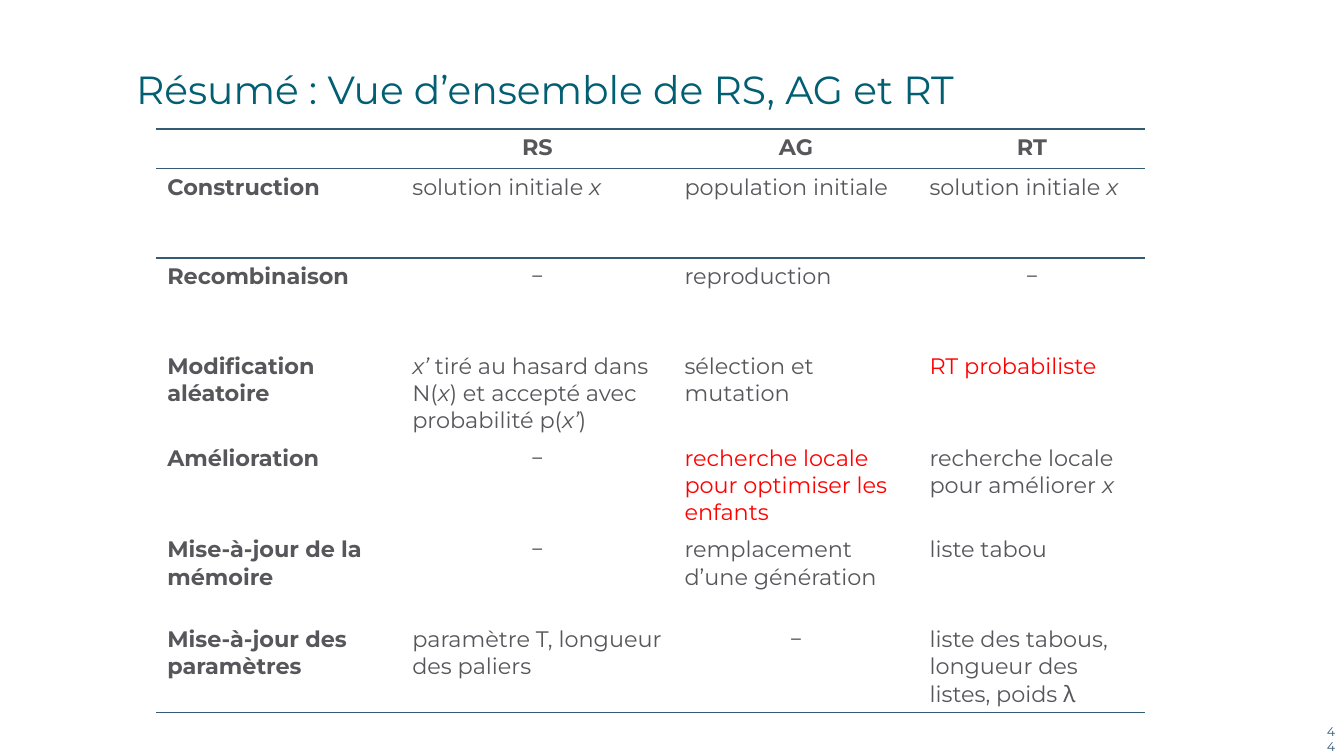
import pptx
import pptx.dml.color
import pptx.enum.text
import pptx.oxml
import pptx.oxml.ns
import pptx.util
from dataclasses import dataclass


@dataclass(frozen=True)
class Theme:
    face: str = "Montserrat"
    teal: str = "025E73"
    gray: str = "57565B"
    red: str = "FF0000"
    line: str = "335B74"
    head: int = 28
    body: int = 16
    note: int = 9


theme = Theme()
align = pptx.enum.text.PP_ALIGN
top = pptx.enum.text.MSO_ANCHOR.TOP


def grid(*steps):
    """Turn grid steps of a twentieth of an inch into lengths."""
    return [pptx.util.Inches(step / 20) for step in steps]


def style(para, size, color, side=align.LEFT, bold=False):
    para.alignment = side
    font = para.font
    font.name, font.size, font.bold = theme.face, pptx.util.Pt(size), bold
    font.color.rgb = pptx.dml.color.RGBColor.from_string(color)


deck = pptx.Presentation()
deck.slide_width, deck.slide_height = grid(266.6, 150)
slide = deck.slides.add_slide(deck.slide_layouts[5])

# Title
title = slide.shapes.title
title.left, title.top, title.width, title.height = grid(25, 13, 230, 15)
frame = title.text_frame
frame.text = "Résumé : Vue d’ensemble de RS, AG et RT"
frame.vertical_anchor = top
frame.auto_size = pptx.enum.text.MSO_AUTO_SIZE.NONE
frame.paragraphs[0].line_spacing = 0.9
style(frame.paragraphs[0], theme.head, theme.teal)

# Table content: asterisks enclose italics
rows = [
    ["", "RS", "AG", "RT"],
    ["Construction", "solution initiale *x*", "population initiale",
     "solution initiale *x*"],
    ["Recombinaison", "−", "reproduction", "−"],
    ["Modification aléatoire",
     "*x’* tiré au hasard dans N(*x*) et accepté avec probabilité p(*x’*)",
     "sélection et mutation", "RT probabiliste"],
    ["Amélioration", "−", "recherche locale pour optimiser les enfants",
     "recherche locale pour améliorer *x*"],
    ["Mise-à-jour de la mémoire", "−", "remplacement d’une génération",
     "liste tabou"],
    ["Mise-à-jour des paramètres", "paramètre T, longueur des paliers", "−",
     "liste des tabous, longueur des listes, poids λ"],
]
reds = {(3, 3), (4, 2)}
last = len(rows) - 1
rules = {0: ["lnT", "lnB"], 1: ["lnT"], last: ["lnB"]}

# Table frame, with no built-in style
shape = slide.shapes.add_table(len(rows), 4, *grid(31, 25.6, 196.2, 114.6))
table = shape.table
table.first_row = table.horz_banding = False
mark = table._tbl.tblPr.find(pptx.oxml.ns.qn("a:tableStyleId"))
mark.text = "{2D5ABB26-0587-4C30-8999-92F81FD0307C}"
for col, width in zip(table.columns, grid(48.6, 54, 48.6, 45)):
    col.width = width
for r, row in enumerate(table.rows):
    row.height = grid(17.8 if r else 7.8)[0]

# Cells
for r, texts in enumerate(rows):
    for c, text in enumerate(texts):
        cell = table.cell(r, c)
        cell.fill.background()
        cell.vertical_anchor = top
        cell.margin_left = cell.margin_right = grid(2.2)[0]
        cell.margin_top = cell.margin_bottom = grid(1)[0]
        para = cell.text_frame.paragraphs[0]
        for i, part in enumerate(text.split("*")):
            if part:
                run = para.add_run()
                run.text = part
                if i % 2:
                    run.font.italic = True
        style(para, theme.body,
              theme.red if (r, c) in reds else theme.gray,
              align.CENTER if r == 0 or text == "−" else align.LEFT,
              bold=r == 0 or c == 0)
        for i, side in enumerate(rules.get(r, [])):
            edge = pptx.oxml.parse_xml(
                f'<a:{side} {pptx.oxml.ns.nsdecls("a")} w="12700"><a:solidFill>'
                f'<a:srgbClr val="{theme.line}"/></a:solidFill></a:{side}>')
            cell._tc.get_or_add_tcPr().insert(i, edge)

# Slide number
page = slide.shapes.add_textbox(*grid(261.2, 142.6, 5.6, 4.4)).text_frame
page.word_wrap = True
page.text = "44"
style(page.paragraphs[0], theme.note, theme.line, align.RIGHT)

deck.save("out.pptx")
